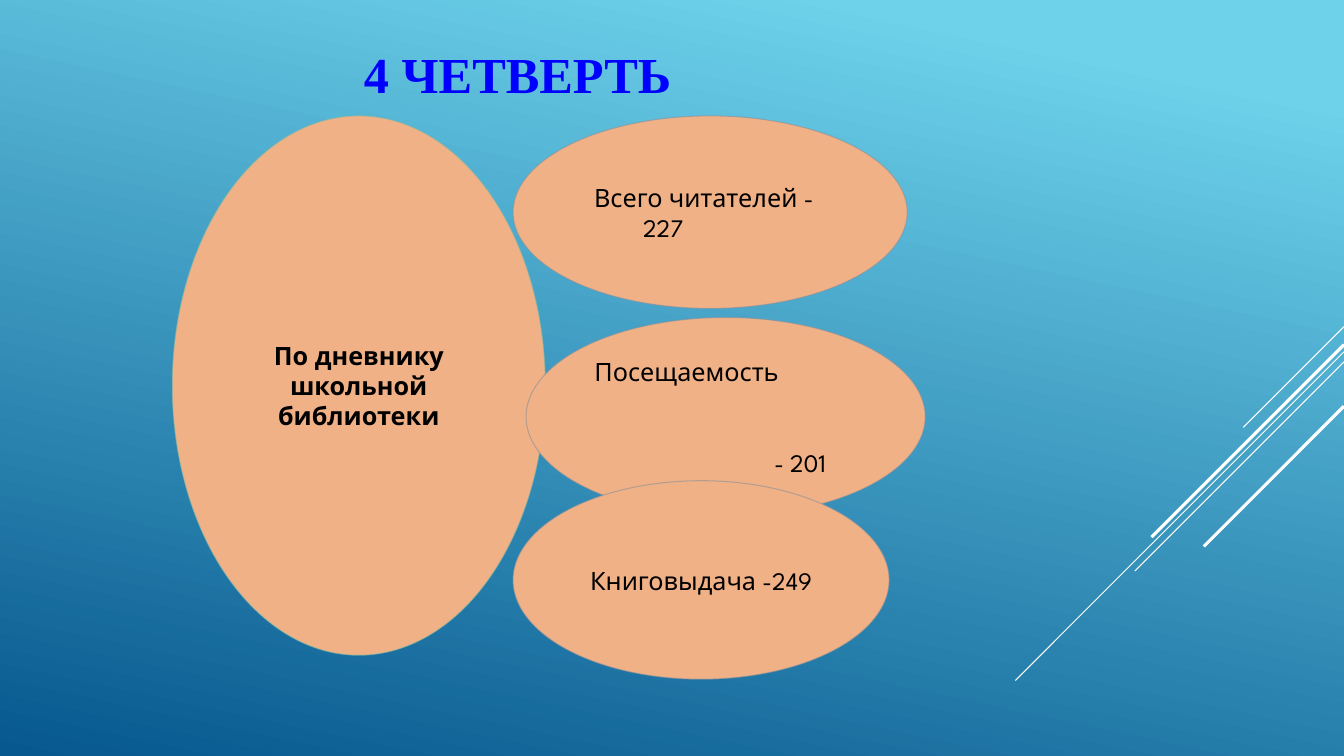
from dataclasses import dataclass

import lxml.etree
import pptx
import pptx.dml.color
import pptx.enum.shapes
import pptx.enum.text
import pptx.oxml.ns
import pptx.util

Pt = pptx.util.Pt
RGBColor = pptx.dml.color.RGBColor
ShapeKind = pptx.enum.shapes.MSO_SHAPE
Align = pptx.enum.text.PP_ALIGN
qn = pptx.oxml.ns.qn

SLIDE_WIDTH, SLIDE_HEIGHT = 960, 540


@dataclass(frozen=True)
class Theme:
    sky: str = "6ED2EB"
    deep: str = "06588E"
    title: str = "0000FF"
    text: str = "000000"
    oval: str = "F1B187"
    main_outline: str = "8AB7A1"
    outline: str = "89919C"
    stripe: str = "FFFFFF"
    title_font: str = "Times New Roman"
    body_font: str = "League Spartan"
    title_size: float = 36
    body_size: float = 18
    thin: float = 0.75
    thick: float = 2.25


@dataclass(frozen=True)
class Line:
    text: str
    indent: float = 0
    space_before: float = 0
    align: Align = Align.LEFT


@dataclass(frozen=True)
class Oval:
    left: float
    top: float
    width: float
    height: float
    lines: tuple[Line, ...]
    kind: ShapeKind = ShapeKind.FLOWCHART_CONNECTOR
    outline: str = Theme.outline
    bold: bool = False


@dataclass(frozen=True)
class Stripe:
    top: float
    run: float
    weight: float = Theme.thin


THEME = Theme()

STRIPES = (
    Stripe(233.3, 72),
    Stripe(251.3, 234.7),
    Stripe(258.5, 149.4),
    Stripe(246.2, 137.5, THEME.thick),
    Stripe(290.2, 100.1, THEME.thick),
)

OVALS = (
    Oval(123.1, 82.8, 266.4, 385.2,
         (Line("По дневнику школьной библиотеки", align=Align.CENTER),),
         ShapeKind.OVAL, THEME.main_outline, True),
    Oval(375.8, 226.8, 285.1, 141.8,
         (Line("Посещаемость"), Line("- 201", indent=128.5, space_before=43.6))),
    Oval(366.5, 82.8, 281.5, 137.5,
         (Line("Всего читателей -", indent=9.5), Line("227", indent=44.5))),
    Oval(366.5, 343.4, 268.6, 141.8,
         (Line("Книговыдача -249", align=Align.CENTER),)),
)


def paint_background(slide) -> None:
    fill = slide.background.fill
    fill.gradient()
    fill.gradient_angle = 360 - 102
    stops = ((0.1, THEME.sky), (1, THEME.deep))
    for stop, (position, color) in zip(fill.gradient_stops, stops):
        stop.position = position
        stop.color.rgb = RGBColor.from_string(color)


def draw_stripe(slide, stripe: Stripe) -> None:
    """Draw a 45-degree line falling leftwards from the right slide edge."""
    connector = slide.shapes.add_connector(
        pptx.enum.shapes.MSO_CONNECTOR.STRAIGHT,
        Pt(SLIDE_WIDTH), Pt(stripe.top),
        Pt(SLIDE_WIDTH - stripe.run), Pt(stripe.top + stripe.run))
    connector.line.color.rgb = RGBColor.from_string(THEME.stripe)
    connector.line.width = Pt(stripe.weight)
    lxml.etree.SubElement(connector.element.spPr, qn("a:effectLst"))


def set_font(paragraph, name: str, size: float, color: str, bold: bool) -> None:
    font = paragraph.font
    font.name, font.size, font.bold = name, Pt(size), bold
    font.color.rgb = RGBColor.from_string(color)


def draw_title(slide) -> None:
    frame = slide.shapes.add_textbox(Pt(208), Pt(21.6), Pt(471), Pt(61.2)).text_frame
    frame.word_wrap = True
    frame.margin_left = Pt(52)
    frame.vertical_anchor = pptx.enum.text.MSO_ANCHOR.MIDDLE
    paragraph = frame.paragraphs[0]
    paragraph.text = "4 ЧЕТВЕРТЬ"
    set_font(paragraph, THEME.title_font, THEME.title_size, THEME.title, True)


def draw_oval(slide, oval: Oval) -> None:
    shape = slide.shapes.add_shape(
        oval.kind, Pt(oval.left), Pt(oval.top), Pt(oval.width), Pt(oval.height))
    shape.shadow.inherit = False
    shape.fill.solid()
    shape.fill.fore_color.rgb = RGBColor.from_string(THEME.oval)
    shape.line.color.rgb = RGBColor.from_string(oval.outline)
    shape.line.width = Pt(THEME.thin)
    outline_color = shape.element.spPr.find(qn("a:ln")).find(".//" + qn("a:srgbClr"))
    lxml.etree.SubElement(outline_color, qn("a:alpha"), val="60000")

    frame = shape.text_frame
    frame.word_wrap = True
    frame.vertical_anchor = pptx.enum.text.MSO_ANCHOR.MIDDLE
    for index, line in enumerate(oval.lines):
        paragraph = frame.add_paragraph() if index else frame.paragraphs[0]
        paragraph.text = line.text
        paragraph.alignment = line.align
        if line.indent:
            properties = paragraph._p.get_or_add_pPr()
            properties.set("marL", str(Pt(line.indent)))
            properties.set("indent", "0")
        if line.space_before:
            paragraph.space_before = Pt(line.space_before)
        set_font(paragraph, THEME.body_font, THEME.body_size, THEME.text, oval.bold)


def main() -> None:
    presentation = pptx.Presentation()
    presentation.slide_width = Pt(SLIDE_WIDTH)
    presentation.slide_height = Pt(SLIDE_HEIGHT)
    slide = presentation.slides.add_slide(presentation.slide_layouts[6])
    paint_background(slide)
    for stripe in STRIPES:
        draw_stripe(slide, stripe)
    draw_title(slide)
    for oval in OVALS:
        draw_oval(slide, oval)
    presentation.save("out.pptx")


if __name__ == "__main__":
    main()
